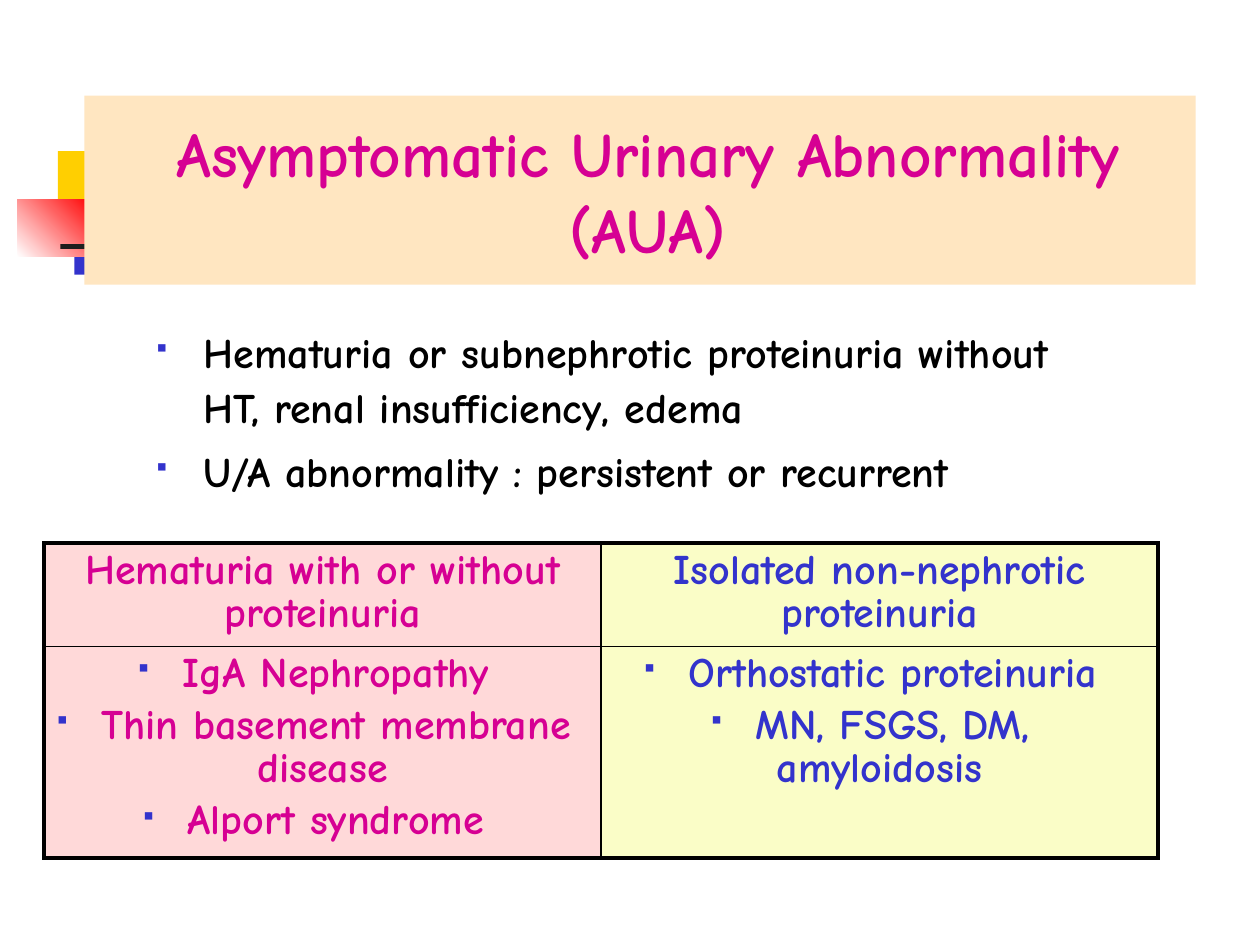
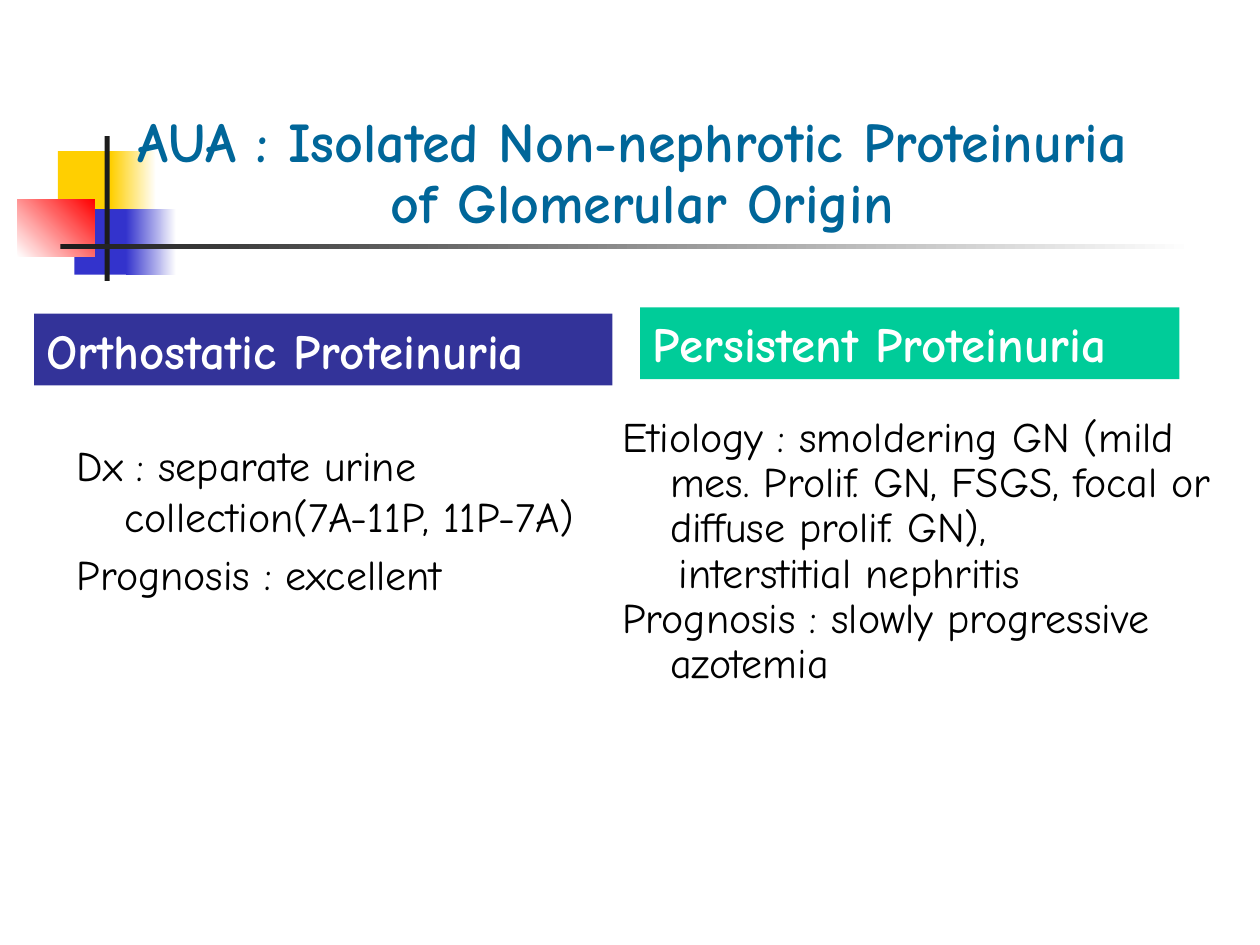
from copy import deepcopy
from dataclasses import dataclass

from lxml import etree
from pptx import Presentation
from pptx.dml.color import RGBColor
from pptx.enum.shapes import MSO_SHAPE
from pptx.enum.text import MSO_ANCHOR, MSO_AUTO_SIZE, PP_ALIGN
from pptx.oxml.ns import qn
from pptx.util import Pt

RECT = MSO_SHAPE.RECTANGLE
TOP, MIDDLE, BOTTOM = MSO_ANCHOR.TOP, MSO_ANCHOR.MIDDLE, MSO_ANCHOR.BOTTOM
LEFT, CENTER = PP_ALIGN.LEFT, PP_ALIGN.CENTER
FIXED = MSO_AUTO_SIZE.NONE
PX = 9144  # 100 px to the inch


@dataclass(frozen=True)
class Theme:
    face: str = "Comic Neue"
    white: str = "FFFFFF"
    black: str = "000000"
    ink: str = "1C1C1C"
    gold: str = "FFCF01"
    blue: str = "3333CC"
    red: str = "FF0000"
    peach: str = "FFE6C1"
    pink: str = "D60093"
    teal: str = "006699"
    navy: str = "333399"
    green: str = "00CC99"
    rose: str = "FFD9D9"
    cream: str = "FAFDC7"
    body: int = 24
    bar: int = 28
    head: int = 32
    big: int = 36
    gap: float = 4.8
    hang: int = 38
    thin: float = 1
    thick: float = 2.25


def rgb(code):
    return RGBColor.from_string(code)


def add(parent, tag, **attrs):
    node = etree.SubElement(parent, qn(tag))
    for key, value in attrs.items():
        node.set(key, str(value))
    return node


class Deck:
    def __init__(self, theme):
        self.theme = theme
        self.prs = Presentation()
        self.prs.slide_width, self.prs.slide_height = 1000 * PX, 750 * PX
        self.slide = None

    def start(self, panel=None):
        """Add a slide with its squares and rule; a panel hides the fades."""
        t = self.theme
        self.slide = self.prs.slides.add_slide(self.prs.slide_layouts[5])
        self.rect((46, 120, 48, 52), t.gold)
        if not panel:
            self.rect((88, 120, 36, 52), t.gold, t.white)
        self.rect((59, 166, 46, 52), t.blue)
        if not panel:
            self.rect((100, 166, 40, 52), t.blue, t.white)
        self.rect((14, 158, 61, 46), t.white, t.red, 45)
        if not panel:
            self.rect((83, 108, 4, 115), t.ink)
        self.rect((48, 194, 900, 4), t.ink, t.white)
        if panel:
            self.rect(panel, t.peach)

    def rect(self, box, fill, fade=None, angle=0):
        """Draw a plain rectangle, fading to a second colour if one is given."""
        shape = self.slide.shapes.add_shape(RECT, *(n * PX for n in box))
        shape.shadow.inherit = False
        shape.line.fill.background()
        if fade:
            shape.fill.gradient()
            shape.fill.gradient_angle = angle
            for stop, code in zip(shape.fill.gradient_stops, (fill, fade)):
                stop.color.rgb = rgb(code)
        else:
            shape.fill.solid()
            shape.fill.fore_color.rgb = rgb(fill)
        return shape

    def style(self, para, size, color, bold=False, align=LEFT, lead=None):
        para.alignment = align
        para.line_spacing = lead
        for run in para.runs:
            font = run.font
            font.name, font.size, font.bold = self.theme.face, Pt(size), bold
            font.color.rgb = rgb(color)
        for brk in para._p.iter(qn("a:br")):
            brk.insert(0, deepcopy(brk.getprevious().find(qn("a:rPr"))))

    def frame(self, frame, anchor):
        frame.word_wrap = True
        frame.auto_size = FIXED
        frame.vertical_anchor = anchor

    def title(self, text, box, size, color, anchor, lead=None):
        title = self.slide.shapes.title
        title.left, title.top, title.width, title.height = (n * PX for n in box)
        title.element.getparent().append(title.element)  # bring to front
        self.frame(title.text_frame, anchor)
        title.text_frame.text = text
        para = title.text_frame.paragraphs[0]
        self.style(para, size, color, True, CENTER, lead)

    def indent(self, para, left, first):
        props = para._p.get_or_add_pPr()
        props.set("marL", str(left * PX))
        props.set("indent", str(first * PX))

    def bullet(self, para):
        """Mark with a small square, which is § in Wingdings."""
        props = para._p.get_or_add_pPr()
        add(add(props, "a:buClr"), "a:srgbClr", val=self.theme.blue)
        add(props, "a:buSzPct", val=60000)
        add(props, "a:buFont", typeface="Wingdings", charset=2)
        add(props, "a:buChar", char="§")

    def text(self, lines, box, bold=False, lead=None, gap=0, marks=False):
        """Add body text with hanging indents; return its paragraphs."""
        t = self.theme
        frame = self.slide.shapes.add_textbox(*(n * PX for n in box)).text_frame
        self.frame(frame, TOP)
        frame.text = "\n".join(lines)
        for i, para in enumerate(frame.paragraphs):
            self.indent(para, t.hang, -t.hang)
            if marks:
                self.bullet(para)
            self.style(para, t.body, t.black, bold, lead=lead)
            if i and gap:
                para.space_before = Pt(gap)
        return frame.paragraphs

    def bar(self, text, box, fill):
        t = self.theme
        frame = self.rect(box, fill).text_frame
        self.frame(frame, MIDDLE)
        frame.text = text
        self.style(frame.paragraphs[0], t.bar, t.white, True)

    def border(self, cell, widths):
        """Set the left, right, top and bottom lines, in that order."""
        props = cell._tc.get_or_add_tcPr()
        for side, width in zip("LRTB", widths):
            line = add(props, f"a:ln{side}", w=int(Pt(width)))
            fill = add(line, "a:solidFill")
            add(fill, "a:srgbClr", val=self.theme.black)

    def table(self, cols, box, heights):
        """Each column is (fill, text colour, heading, list of items)."""
        t = self.theme
        shape = self.slide.shapes.add_table(2, len(cols), *(n * PX for n in box))
        table = shape.table
        table.first_row = table.horz_banding = False
        for row, height in zip(table.rows, heights):
            row.height = height * PX
        last = len(cols) - 1
        for c, (fill, color, head, items) in enumerate(cols):
            for r, lines in enumerate(([head], items)):
                cell = table.cell(r, c)
                edges = (c == 0, c == last, r == 0, r == 1)
                self.border(cell, [t.thick if e else t.thin for e in edges])
                cell.fill.solid()
                cell.fill.fore_color.rgb = rgb(fill)
                cell.text_frame.text = "\n".join(lines)
                for i, para in enumerate(cell.text_frame.paragraphs):
                    if r:
                        self.bullet(para)
                    self.style(para, t.body, color, True, CENTER, 0.9)
                    if i:
                        para.space_before = Pt(t.gap)


def aua(deck):
    t = deck.theme
    deck.start(panel=(67, 76, 882, 150))
    deck.title("Asymptomatic Urinary Abnormality (AUA)",
               (79, 86, 870, 130), t.big, t.pink, TOP)
    deck.text(["Hematuria or subnephrotic proteinuria without HT, "
               "renal insufficiency, edema",
               "U/A abnormality : persistent or recurrent"],
              (114, 250, 783, 158), True, 1.1, t.gap, True)
    deck.table([
        (t.rose, t.pink, "Hematuria with or without proteinuria",
         [" IgA Nephropathy", " Thin basement membrane disease",
          " Alport syndrome"]),
        (t.cream, t.blue, "Isolated non-nephrotic proteinuria",
         [" Orthostatic proteinuria", " MN, FSGS, DM,\vamyloidosis"]),
    ], (35, 431, 884, 250), (82, 168))


def origin(deck):
    t = deck.theme
    deck.start()
    deck.title("AUA : Isolated Non-nephrotic Proteinuria \vof Glomerular Origin",
               (20, 84, 980, 108), t.head, t.teal, BOTTOM, 0.9)
    deck.text(["Dx : separate urine collection(7A-11P, 11P-7A)",
               "Prognosis : excellent"],
              (51, 344, 425, 189), gap=t.gap)
    lines = deck.text(["Etiology : smoldering GN (mild mes. Prolif. GN, FSGS, "
                       "focal or diffuse prolif. GN),",
                       "interstitial nephritis",
                       "Prognosis : slowly progressive azotemia"],
                      (484, 325, 495, 239), lead=0.9)
    deck.indent(lines[1], 45, 0)
    deck.bar("Orthostatic Proteinuria", (27, 249, 459, 57), t.navy)
    deck.bar("Persistent Proteinuria", (508, 244, 428, 57), t.green)


def main():
    deck = Deck(Theme())
    aua(deck)
    origin(deck)
    deck.prs.save("out.pptx")


if __name__ == "__main__":
    main()
